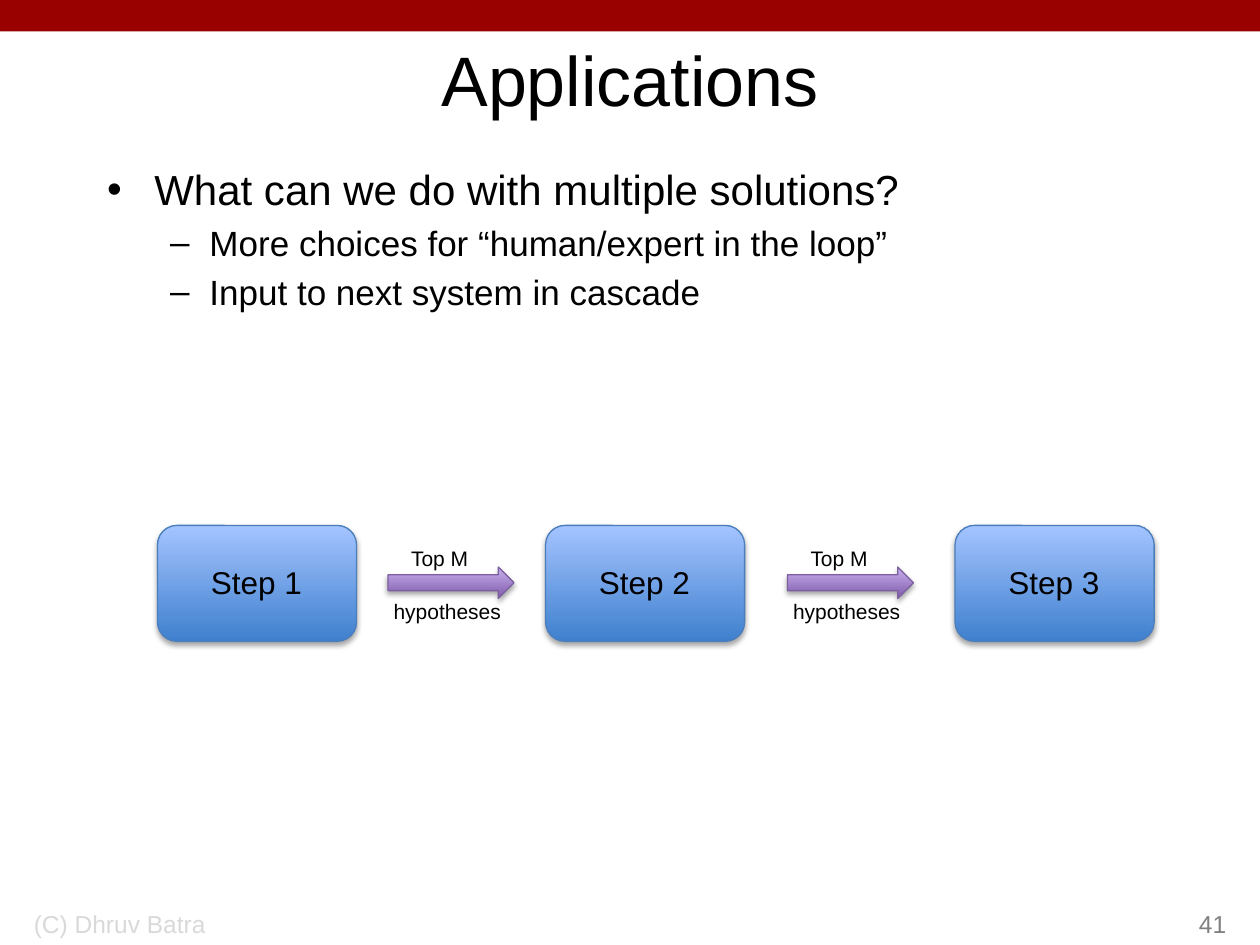
from lxml import etree
from pptx import Presentation
from pptx.dml.color import RGBColor
from pptx.enum.shapes import MSO_SHAPE
from pptx.enum.text import MSO_ANCHOR, PP_ALIGN
from pptx.oxml import parse_xml
from pptx.util import Inches, Pt

LEFT, CENTER, RIGHT = PP_ALIGN.LEFT, PP_ALIGN.CENTER, PP_ALIGN.RIGHT
TOP, MIDDLE, BOTTOM = MSO_ANCHOR.TOP, MSO_ANCHOR.MIDDLE, MSO_ANCHOR.BOTTOM
RECTANGLE, ARROW = MSO_SHAPE.RECTANGLE, MSO_SHAPE.RIGHT_ARROW
ROUNDED = MSO_SHAPE.ROUNDED_RECTANGLE

BLACK = RGBColor(0x00, 0x00, 0x00)
CRIMSON = RGBColor(0x99, 0x00, 0x00)
LIGHT_GRAY = RGBColor(0xD9, 0xD9, 0xD9)
GRAY = RGBColor(0x80, 0x80, 0x80)
BLUE_COLORS = (RGBColor(0x3F, 0x80, 0xCE), RGBColor(0xA4, 0xC4, 0xFF), RGBColor(0x4B, 0x7E, 0xBC))
PURPLE_COLORS = (RGBColor(0x7F, 0x5B, 0xAB), RGBColor(0xC8, 0xB0, 0xED), RGBColor(0x7D, 0x60, 0xA0))

SHADOW = etree.tostring(etree.XML(
    '<a:effectLst xmlns:a="http://schemas.openxmlformats.org/drawingml/2006/main">'
    '<a:outerShdw blurRad="39370" dist="22860" dir="5400000" rotWithShape="0">'
    '<a:srgbClr val="000000"><a:alpha val="35000"/></a:srgbClr>'
    '</a:outerShdw></a:effectLst>'))


def write(box, text, size, color=BLACK, align=CENTER, anchor=TOP, wrap=False):
    frame = box.text_frame
    frame.word_wrap = wrap
    frame.vertical_anchor = anchor
    para = frame.paragraphs[0]
    para.alignment = align
    span = para.add_run()
    span.text = text
    span.font.name = "Arial"
    span.font.size = Pt(size)
    span.font.color.rgb = color


def add_glossy(kind, left, top, width, height, colors):
    shape = page.shapes.add_shape(kind, Inches(left), Inches(top), Inches(width), Inches(height))
    bottom_color, top_color, line_color = colors
    shape.fill.gradient()
    shape.fill.gradient_angle = 90
    for stop, color in zip(shape.fill.gradient_stops, (bottom_color, top_color)):
        stop.color.rgb = color
    shape.line.color.rgb = line_color
    shape.line.width = Pt(0.75)
    shape._element.spPr.append(parse_xml(SHADOW))


deck = Presentation()
deck.slide_width = Inches(10)
deck.slide_height = Inches(7.5)
page = deck.slides.add_slide(deck.slide_layouts[1])

band = page.shapes.add_shape(RECTANGLE, 0, 0, Inches(10), Inches(0.25))
band.shadow.inherit = False
band.fill.solid()
band.fill.fore_color.rgb = CRIMSON
band.line.fill.background()

title = page.shapes.title
title.left, title.top, title.width, title.height = Inches(0.75), Inches(0.25), Inches(8.5), Inches(0.75)
write(title, "Applications", 40, anchor=MIDDLE, wrap=True)

body = page.placeholders[1]
body.left, body.top, body.width, body.height = Inches(0.75), Inches(1.25), Inches(8.5), Inches(5.75)
points = [
    (0, "What can we do with multiple solutions?", 24),
    (1, "More choices for “human/expert in the loop”", 20),
    (1, "Input to next system in cascade", 20),
]
for index, (level, text, size) in enumerate(points):
    para = body.text_frame.add_paragraph() if index else body.text_frame.paragraphs[0]
    para.level = level
    span = para.add_run()
    span.text = text
    span.font.name = "Arial"
    span.font.size = Pt(size)
    span.font.color.rgb = BLACK

footers = [
    (0.17, 3.17, "(C) Dhruv Batra", LIGHT_GRAY, LEFT),
    (7.75, 2.08, "41", GRAY, RIGHT),
]
for left, width, text, color, align in footers:
    box = page.shapes.add_textbox(Inches(left), Inches(7), Inches(width), Inches(0.5))
    write(box, text, 14, color, align, BOTTOM, True)

for number, left in enumerate((1.25, 4.33, 7.58), 1):
    add_glossy(ROUNDED, left, 4.17, 1.58, 0.92, BLUE_COLORS)
    box = page.shapes.add_textbox(Inches(left + 0.32), Inches(4.42), Inches(0.93), Inches(0.4))
    write(box, f"Step {number}", 18)

arrow_labels = [("Top M", 0.08, 4.28, 0.66), ("hypotheses", -0.06, 4.7, 1.06)]
for left in (3.08, 6.25):
    add_glossy(ARROW, left, 4.5, 1, 0.25, PURPLE_COLORS)
    for text, offset, top, width in arrow_labels:
        box = page.shapes.add_textbox(Inches(left + offset), Inches(top), Inches(width), Inches(0.3))
        write(box, text, 12)

deck.save("out.pptx")
